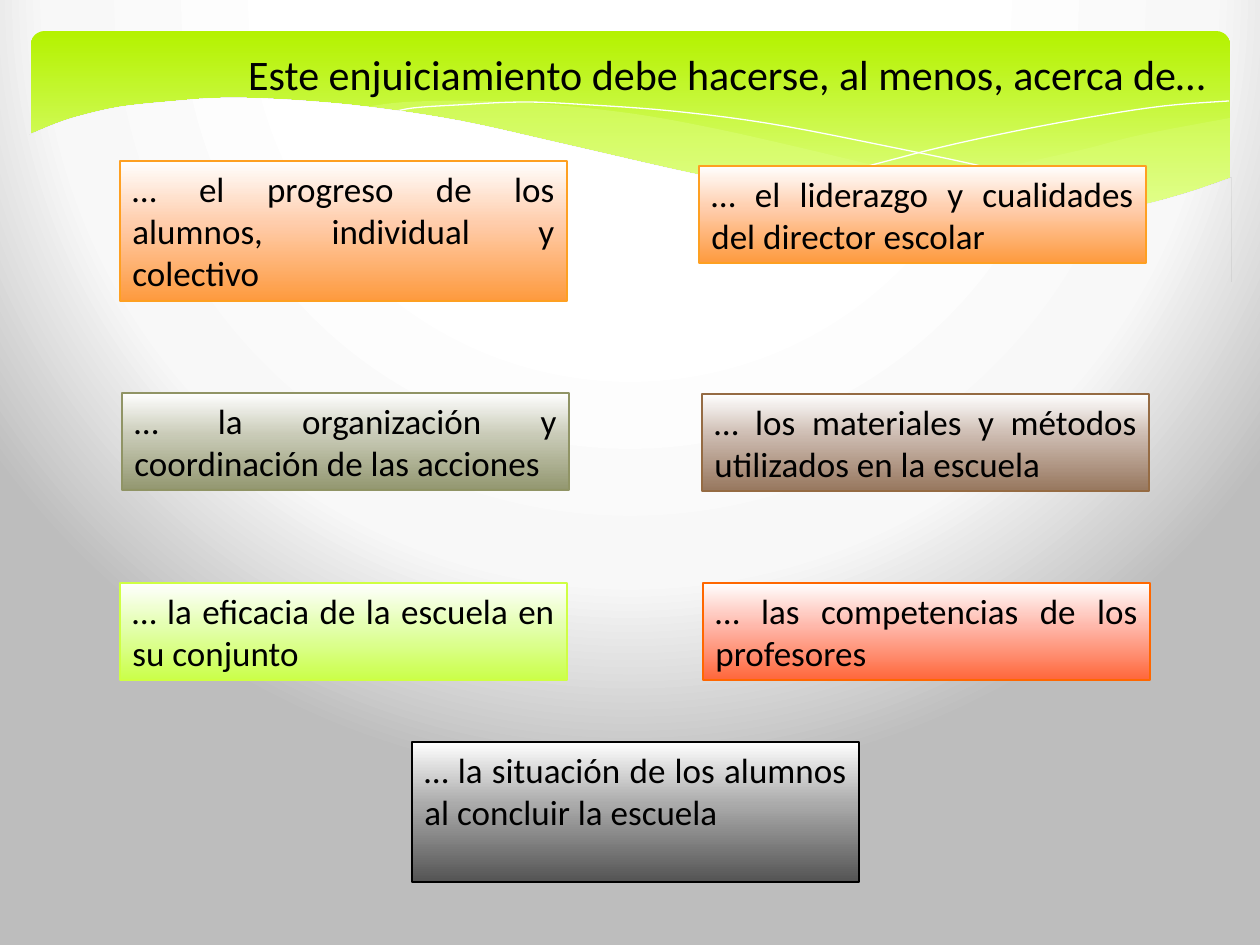
import pptx
import pptx.dml.color
import pptx.enum.shapes
import pptx.enum.text
import pptx.oxml
import pptx.oxml.ns
import pptx.util
from lxml import etree

RGBColor = pptx.dml.color.RGBColor
Align = pptx.enum.text.PP_ALIGN
Shape = pptx.enum.shapes.MSO_SHAPE
qn = pptx.oxml.ns.qn

PX_PER_INCH = 126
FONT = "Calibri"
BLACK = RGBColor(0x00, 0x00, 0x00)
WHITE = RGBColor(0xFF, 0xFF, 0xFF)
LIGHT_GREY = RGBColor(0xF8, 0xF8, 0xF8)
GREY = RGBColor(0xBD, 0xBD, 0xBD)
LIME = RGBColor(0xB4, 0xF2, 0x00)
PALE_LIME = RGBColor(0xE2, 0xFF, 0x8E)
WAVE_LIME = RGBColor(0xDF, 0xFF, 0x82)

# Middle gradient colour, end gradient colour, outline
ORANGE = (RGBColor(0xFF, 0xCD, 0xAC), RGBColor(0xFE, 0x9A, 0x3E), RGBColor(0xFE, 0xA0, 0x22))
OLIVE = (RGBColor(0xC8, 0xCA, 0xB6), RGBColor(0x93, 0x97, 0x70), RGBColor(0x90, 0x94, 0x65))
BROWN = (RGBColor(0xCB, 0xB9, 0xAE), RGBColor(0x97, 0x77, 0x5E), RGBColor(0x95, 0x6B, 0x43))
GREEN = (RGBColor(0xE4, 0xFF, 0xB0), RGBColor(0xCA, 0xFF, 0x49), RGBColor(0xCF, 0xFF, 0x43))
RED = (RGBColor(0xFF, 0xB8, 0xAB), RGBColor(0xFF, 0x67, 0x3B), RGBColor(0xFF, 0x67, 0x00))
CHARCOAL = (RGBColor(0xAB, 0xAB, 0xAB), RGBColor(0x54, 0x54, 0x54), BLACK)

BOX_WIDTH = 447
TWO_LINES, THREE_LINES = 97, 140
BOXES = [
    (120, 161, THREE_LINES, ORANGE, "… el progreso de los alumnos, individual y colectivo"),
    (699, 166, TWO_LINES, ORANGE, "… el liderazgo y cualidades del director escolar"),
    (122, 393, TWO_LINES, OLIVE, "… la organización y coordinación de las acciones"),
    (702, 394, TWO_LINES, BROWN, "… los materiales y métodos utilizados en la escuela"),
    (120, 583, TWO_LINES, GREEN, "… la eficacia de la escuela en su conjunto"),
    (703, 583, TWO_LINES, RED, "… las competencias de los profesores"),
    (412, 742, THREE_LINES, CHARCOAL, "… la situación de los alumnos al concluir la escuela"),
]

RIGHT_WAVE_TOP = [(1230, 118), (1160, 131), (1123, 139), (1085, 149), (1014, 165),
                  (949, 180), (890, 192), (833, 202)]
RIGHT_WAVE_BOTTOM = [(833, 202), (906, 210), (969, 215), (1026, 217), (1076, 214),
                     (1120, 209), (1160, 202), (1196, 192), (1230, 178)]
LEFT_WAVE_TOP = [(1125, 210), (1055, 200), (977, 188), (890, 169), (793, 146), (717, 129),
                 (648, 116), (586, 108), (529, 103), (479, 101), (433, 101), (394, 103),
                 (360, 108)]
LEFT_WAVE_BOTTOM = [(360, 108), (431, 118), (509, 134), (566, 146), (668, 170), (757, 189),
                    (838, 203), (910, 212), (974, 217), (1031, 218), (1080, 215), (1125, 210)]
FALLING_LINE = [(389, 113), (413, 108), (457, 105), (524, 102), (591, 105), (672, 111),
                (766, 123), (876, 144), (1002, 171), (1143, 209)]
RISING_LINE = [(772, 190), (823, 178), (876, 164), (942, 147), (1016, 131), (1091, 117),
               (1164, 106), (1229, 101)]
PAGE_EDGE = [(1231, 178), (1184, 194), (1133, 207), (1071, 214), (999, 215), (915, 210),
             (816, 197), (699, 175), (563, 144), (460, 121), (368, 107), (290, 100),
             (223, 98), (166, 102), (120, 107), (84, 115), (58, 123), (29, 135)]
PAGE_BOTTOM = [(29, 282), (1231, 282)]


def px(value):
    return pptx.util.Emu(round(value * 914400 / PX_PER_INCH))


def fill_gradient(fill, properties, stops, circular=False):
    """Fill with (percent, colour) stops, downwards or in circles."""
    fill.background()
    gradient = pptx.oxml.parse_xml(
        f'<a:gradFill {pptx.oxml.ns.nsdecls("a")} rotWithShape="1"><a:gsLst/></a:gradFill>')
    for percent, color in stops:
        stop = etree.SubElement(gradient[0], qn("a:gs"), pos=str(percent * 1000))
        etree.SubElement(stop, qn("a:srgbClr"), val=str(color))
    if circular:
        circle = etree.SubElement(gradient, qn("a:path"), path="circle")
        etree.SubElement(circle, qn("a:fillToRect"), l="20000", t="-40000", r="20000", b="140000")
    else:
        etree.SubElement(gradient, qn("a:lin"), ang="5400000", scaled="0")
    properties.replace(properties.find(qn("a:noFill")), gradient)


def curve(points, steps=5):
    """Sample a Catmull-Rom spline that passes through the points."""
    padded = [points[0], *points, points[-1]]
    samples = [points[0]]
    for a, b, c, d in zip(padded, padded[1:], padded[2:], padded[3:]):
        for step in range(1, steps + 1):
            t = step / steps
            samples.append(tuple(
                b[i] + t * (c[i] - a[i]) / 2
                + t**2 * (2 * a[i] - 5 * b[i] + 4 * c[i] - d[i]) / 2
                + t**3 * (3 * b[i] - a[i] - 3 * c[i] + d[i]) / 2
                for i in (0, 1)))
    return samples


def add_outline(group, points, close=True):
    start, *rest = [(px(x), px(y)) for x, y in points]
    builder = group.shapes.build_freeform(*start)
    builder.add_line_segments(rest, close=close)
    shape = builder.convert_to_shape()
    shape.shadow.inherit = False
    return shape


def add_wave(group, top, bottom, opacity):
    shape = add_outline(group, curve(top) + curve(bottom))
    shape.fill.solid()
    shape.fill.fore_color.rgb = WAVE_LIME
    color = shape._element.spPr.find(qn("a:solidFill"))[0]
    etree.SubElement(color, qn("a:alpha"), val=str(opacity * 1000))
    shape.line.fill.background()


def add_hairline(group, points):
    shape = add_outline(group, curve(points), close=False)
    shape.fill.background()
    shape.line.color.rgb = WHITE
    shape.line.width = pptx.util.Pt(0)


def add_page_edge(group):
    """Cover the lower part of the banner with the slide background."""
    shape = add_outline(group, curve(PAGE_EDGE) + PAGE_BOTTOM)
    shape.line.fill.background()
    shape._element.set("useBgFill", "1")


def add_banner(slide):
    banner = slide.shapes.add_shape(Shape.ROUNDED_RECTANGLE, px(31), px(31), px(1199), px(197))
    banner.adjustments[0] = 0.07
    banner.shadow.inherit = False
    fill_gradient(banner.fill, banner._element.spPr, [(0, LIME), (90, PALE_LIME)])
    banner.line.fill.background()
    group = slide.shapes.add_group_shape()
    add_wave(group, RIGHT_WAVE_TOP, RIGHT_WAVE_BOTTOM, 29)
    add_wave(group, LEFT_WAVE_TOP, LEFT_WAVE_BOTTOM, 40)
    add_hairline(group, FALLING_LINE)
    add_hairline(group, RISING_LINE)
    add_page_edge(group)


def write_text(shape, text, size, alignment):
    frame = shape.text_frame
    frame.word_wrap = True
    frame.vertical_anchor = pptx.enum.text.MSO_ANCHOR.TOP
    paragraph = frame.paragraphs[0]
    paragraph.text = text
    paragraph.alignment = alignment
    for name, value in {"name": FONT, "size": pptx.util.Pt(size)}.items():
        setattr(paragraph.font, name, value)
    paragraph.font.color.rgb = BLACK


def add_title(slide, text):
    box = slide.shapes.add_textbox(px(146), px(42), px(1072), px(63))
    write_text(box, text, 24, Align.RIGHT)


def add_box(slide, left, top, height, palette, text):
    middle, end, outline = palette
    box = slide.shapes.add_shape(Shape.RECTANGLE, px(left), px(top), px(BOX_WIDTH), px(height))
    box.shadow.inherit = False
    fill_gradient(box.fill, box._element.spPr, [(0, WHITE), (44, middle), (100, end)])
    box.line.color.rgb = outline
    box.line.width = pptx.util.Pt(0.75)
    write_text(box, text, 20, Align.JUSTIFY)


def main():
    presentation = pptx.Presentation()
    presentation.slide_width, presentation.slide_height = px(1260), px(945)
    slide = presentation.slides.add_slide(presentation.slide_layouts[6])
    background_fill = slide.background.fill
    background_fill.background()
    fill_gradient(background_fill, slide._element.find(".//" + qn("p:bgPr")),
                  [(40, WHITE), (74, LIGHT_GREY), (100, GREY)], circular=True)
    add_banner(slide)
    add_title(slide, "Este enjuiciamiento debe hacerse, al menos, acerca de…")
    for box in BOXES:
        add_box(slide, *box)
    presentation.save("out.pptx")


if __name__ == "__main__":
    main()
